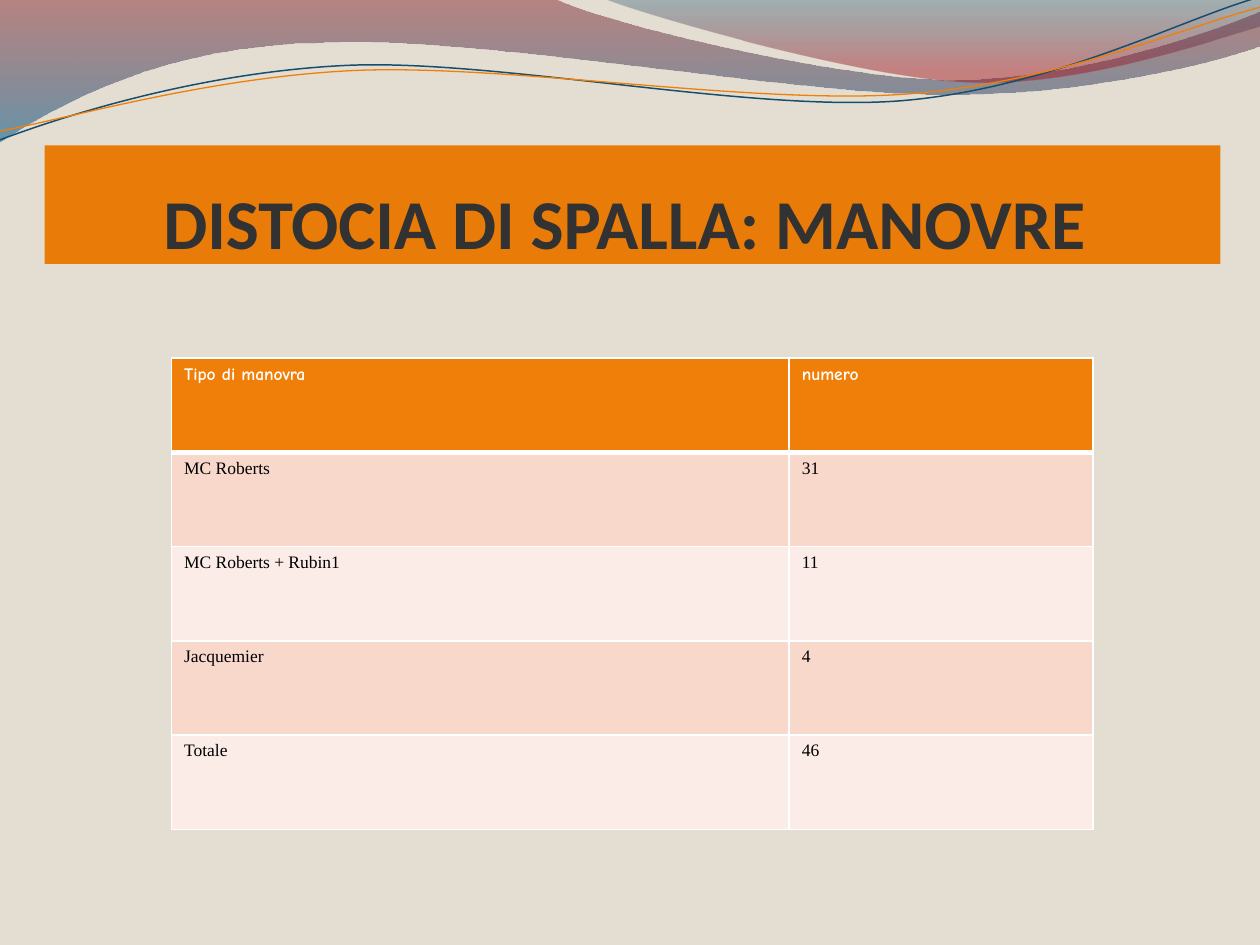
"""Builds the slide on shoulder dystocia manoeuvres, with its wave header and table."""
import lxml.etree
import pptx
import pptx.dml.color
import pptx.enum.text
import pptx.oxml.ns
import pptx.util

Cm, Pt, qn = pptx.util.Cm, pptx.util.Pt, pptx.oxml.ns.qn

HEADING = "DISTOCIA DI SPALLA: MANOVRE "
MANOEUVRES = [
    ("Tipo di manovra", "numero"),
    ("MC Roberts", "31"),
    ("MC Roberts + Rubin1", "11"),
    ("Jacquemier", "4"),
    ("Totale", "46"),
]
COLUMN_WIDTHS = (12.45, 6.12)
ROW_HEIGHT = 1.9
HEADER_FILL, BAND_FILLS = "F07F09", ("F9D8CC", "FCECE7")
HEADER_FONT = {"name": "Comic Neue", "size": Pt(10), "bold": True}
ROW_FONT = {"name": "Times New Roman", "size": Pt(10), "bold": False}
HEADING_FONT = {"name": "Calibri", "size": Pt(40), "bold": True}

BANDS = [
    ((0, -0.03), [
        [(11.18, -0.03)],
        [(12.09, 0.43), (16.87, 1.6), (19.25, 1.6)],
        [(21.67, 1.6), (24.33, 0.66), (25.4, 0.23)],
        [(25.43, 0.91)],
        [(24.97, 1.12), (22.1, 1.93), (18.95, 1.9)],
        [(15.8, 1.9), (9.7, 0.71), (6.53, 0.86)],
        [(3.28, 0.89), (1.17, 2.11), (-0.03, 2.87)],
        [(0, -0.03)],
    ], [(0, "7E1621", 45), (1, "005689", 55)]),
    ((12.17, -0.03), [
        [(12.93, 0.28), (17.32, 1.57), (19.53, 1.65)],
        [(21.74, 1.75), (24.41, 0.81), (25.4, 0.53)],
        [(25.4, 0)],
        [(12.17, -0.03)],
    ], [(0, "094467", 30), (0.8, "A10F1F", 45)]),
]
STRANDS = [
    ((-0.05, 2.22), [
        [(1.19, 1.82), (4.02, 1.04), (7.05, 1.05)],
        [(10.05, 1.07), (15.02, 2.37), (18.08, 2.29)],
        [(21.13, 2.2), (23.86, 0.91), (25.41, 0.55)],
    ], "184E6D", 0.85),
    ((-0.04, 2.04), [
        [(1.16, 1.9), (4.17, 1.15), (7.2, 1.16)],
        [(10.25, 1.18), (15.13, 2.23), (18.19, 2.16)],
        [(21.22, 2.1), (23.93, 1.06), (25.45, 0.75)],
    ], "F07F09", 0.75),
]
STRAND_TILT = 357.3


def rgb(code):
    return pptx.dml.color.RGBColor.from_string(code)


def paint(fill, code):
    fill.solid()
    fill.fore_color.rgb = rgb(code)


def style(font, values, code):
    for name, value in values.items():
        setattr(font, name, value)
    font.color.rgb = rgb(code)


def add_wave(slide, start, steps, close):
    builder = slide.shapes.build_freeform(*map(Cm, start))
    builder.add_line_segments([(Cm(x), Cm(y)) for step in steps for x, y in step], close=close)
    wave = builder.convert_to_shape()
    wave.shadow.inherit = False
    lines = iter(list(wave.element.iter(qn("a:lnTo"))))
    for step in steps:
        parts = [next(lines) for _ in step]
        if len(step) == 3:
            curve = lxml.etree.Element(qn("a:cubicBezTo"))
            parts[0].addprevious(curve)
            for part in parts:
                curve.append(part[0])
                part.getparent().remove(part)
    return wave


def add_band(slide, start, steps, stops):
    band = add_wave(slide, start, steps, True)
    band.line.fill.background()
    band.fill.gradient()
    band.fill.gradient_angle = 270
    for stop, (position, code, _) in zip(band.fill.gradient_stops, stops):
        stop.position = position
        stop.color.rgb = rgb(code)
    for color, (_, _, opacity) in zip(band.element.spPr.iter(qn("a:srgbClr")), stops):
        lxml.etree.SubElement(color, qn("a:alpha"), val=str(opacity * 1000))


def add_strand(slide, start, steps, code, width):
    strand = add_wave(slide, start, steps, False)
    strand.rotation = STRAND_TILT
    strand.fill.background()
    strand.line.color.rgb = rgb(code)
    strand.line.width = Pt(width)


def add_borders(cell, widths):
    properties = cell._tc.get_or_add_tcPr()
    for side, width in widths.items():
        border = lxml.etree.SubElement(properties, qn(f"a:ln{side}"), w=str(Pt(width)))
        fill = lxml.etree.SubElement(border, qn("a:solidFill"))
        lxml.etree.SubElement(fill, qn("a:srgbClr"), val="FFFFFF")


def add_heading(slide):
    heading = slide.shapes.title
    box = {"left": 0.9, "top": 2.93, "width": 23.7, "height": 2.39}
    for name, value in box.items():
        setattr(heading, name, Cm(value))
    paint(heading.fill, "E97B08")
    frame = heading.text_frame
    layout = {
        "margin_left": 0, "margin_right": 0, "margin_top": Cm(0.13), "margin_bottom": 0,
        "vertical_anchor": pptx.enum.text.MSO_ANCHOR.BOTTOM,
        "auto_size": pptx.enum.text.MSO_AUTO_SIZE.NONE, "word_wrap": True,
    }
    for name, value in layout.items():
        setattr(frame, name, value)
    frame.text = HEADING
    frame.paragraphs[0].alignment = pptx.enum.text.PP_ALIGN.CENTER
    style(frame.paragraphs[0].runs[0].font, HEADING_FONT, "323232")


def add_manoeuvres(slide):
    table = slide.shapes.add_table(
        len(MANOEUVRES), len(COLUMN_WIDTHS), Cm(3.46), Cm(7.22),
        Cm(sum(COLUMN_WIDTHS)), Cm(ROW_HEIGHT * len(MANOEUVRES))).table
    for column, width in zip(table.columns, COLUMN_WIDTHS):
        column.width = Cm(width)
    for r, row in enumerate(MANOEUVRES):
        header = r == 0
        for c, text in enumerate(row):
            cell = table.cell(r, c)
            cell.text = text
            style(cell.text_frame.paragraphs[0].runs[0].font,
                  HEADER_FONT if header else ROW_FONT, "FFFFFF" if header else "000000")
            add_borders(cell, {"L": 1, "R": 1, "T": 3 if r == 1 else 1, "B": 3 if header else 1})
            paint(cell.fill, HEADER_FILL if header else BAND_FILLS[(r - 1) % 2])


def main():
    deck = pptx.Presentation()
    deck.slide_width, deck.slide_height = Cm(25.4), Cm(19.05)
    slide = deck.slides.add_slide(deck.slide_layouts[5])
    paint(slide.background.fill, "E3DED1")
    for band in BANDS:
        add_band(slide, *band)
    for strand in STRANDS:
        add_strand(slide, *strand)
    add_manoeuvres(slide)
    add_heading(slide)
    deck.save("out.pptx")


if __name__ == "__main__":
    main()
